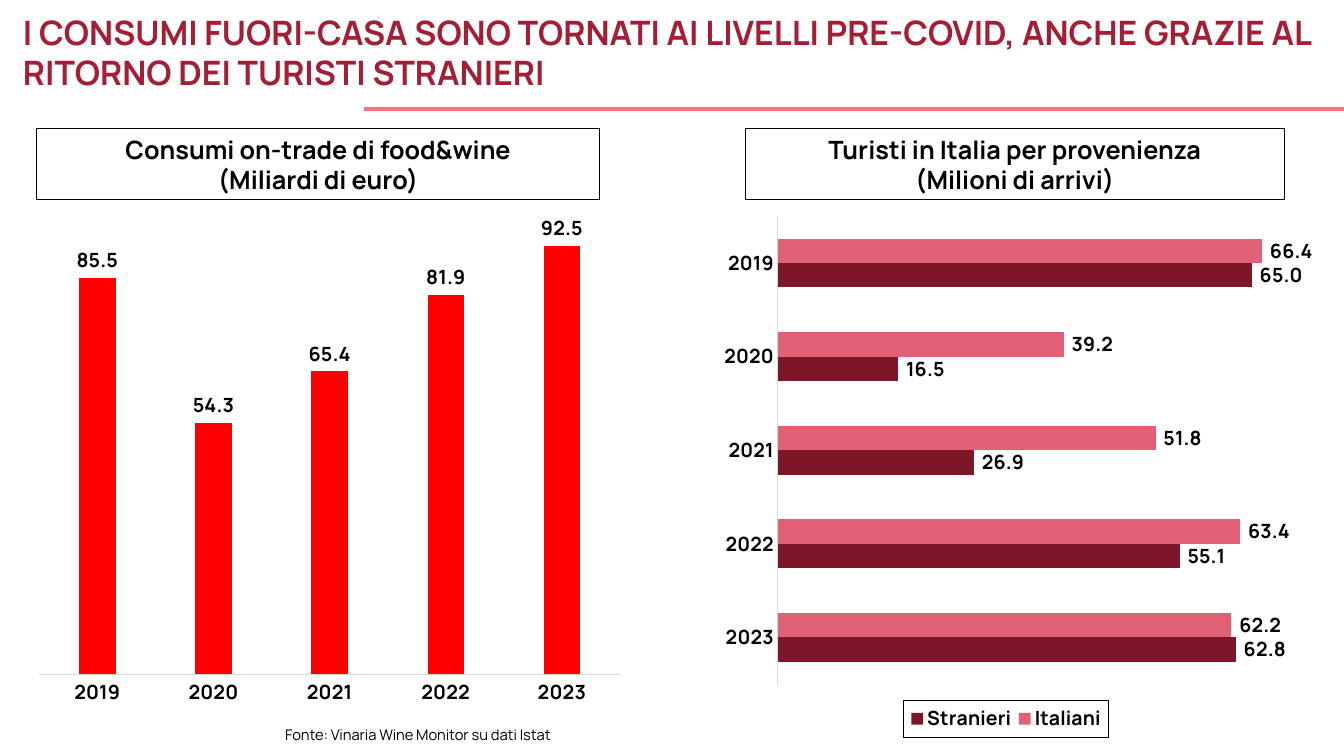
from lxml import etree
from pptx import Presentation
from pptx import util as u
from pptx.chart.data import CategoryChartData
from pptx.dml.color import RGBColor
from pptx.enum import chart as ch, shapes, text
from pptx.oxml import parse_xml
from pptx.oxml.ns import nsdecls, qn

BLACK = RGBColor(0x00, 0x00, 0x00)
WHITE = RGBColor(0xFF, 0xFF, 0xFF)
CRIMSON = RGBColor(0xA4, 0x1F, 0x35)
CORAL = RGBColor(0xF8, 0x75, 0x75)
RED = RGBColor(0xFF, 0x00, 0x00)
ROSE = RGBColor(0xE1, 0x60, 0x75)
WINE = RGBColor(0x7B, 0x17, 0x28)
GREY = RGBColor(0xD9, 0xD9, 0xD9)

PX = 9144  # 100 px to the inch
YEARS = ["2019", "2020", "2021", "2022", "2023"]


class Slide:
    font = "Manrope"

    def __init__(self, prs):
        self.s = prs.slides.add_slide(prs.slide_layouts[6])

    def box(self, *px):
        return [u.Emu(n * PX) for n in px]

    def style(self, f, size, color=BLACK, bold=True):
        f.name, f.size, f.bold = self.font, u.Pt(size), bold
        f.color.rgb = color

    def fill_text(self, tf, lines, size, color, bold, align):
        for i, line in enumerate(lines):
            p = tf.add_paragraph() if i else tf.paragraphs[0]
            p.text, p.alignment = line, align
            self.style(p.font, size, color, bold)

    def text(self, at, line, size, color=BLACK, bold=False, wrap=True):
        tf = self.s.shapes.add_textbox(*self.box(*at)).text_frame
        tf.word_wrap = wrap
        self.fill_text(tf, [line], size, color, bold, text.PP_ALIGN.LEFT)

    def heading(self, at, lines):
        sp = self.s.shapes.add_shape(shapes.MSO_SHAPE.RECTANGLE, *self.box(*at))
        sp.shadow.inherit = False
        sp.fill.background()
        sp.line.color.rgb, sp.line.width = BLACK, u.Pt(0.75)
        sp.text_frame.vertical_anchor = text.MSO_ANCHOR.MIDDLE
        self.fill_text(sp.text_frame, lines, 18, BLACK, True, text.PP_ALIGN.CENTER)

    def rule(self, ends, color, width):
        c = self.s.shapes.add_connector(shapes.MSO_CONNECTOR.STRAIGHT, *self.box(*ends))
        c.line.color.rgb, c.line.width = color, u.Pt(width)
        etree.SubElement(c._element.spPr, qn("a:effectLst"))

    def layout(self, x, y, w, h, inner=False):
        target = '<c:layoutTarget val="inner"/>' if inner else ""
        modes = "".join(f'<c:{k}Mode val="edge"/>' for k in "xy")
        sizes = "".join(f'<c:{k} val="{v}"/>' for k, v in zip("xywh", (x, y, w, h)))
        return parse_xml(f'<c:layout {nsdecls("c")}><c:manualLayout>{target}{modes}'
                         f'{sizes}</c:manualLayout></c:layout>')

    def chart(self, at, kind, series, top, gap, overlap, fmt, plot_area):
        """series: (name, colour, values); plot_area: fractions of the chart."""
        data = CategoryChartData()
        data.categories = YEARS
        for name, _, values in series:
            data.add_series(name, values)
        chart = self.s.shapes.add_chart(kind, *self.box(*at), data).chart
        chart.has_title = chart.has_legend = False
        self.style(chart.font, 14)

        # Axes
        cat, val = chart.category_axis, chart.value_axis
        cat.major_tick_mark = ch.XL_TICK_MARK.NONE
        cat.format.line.color.rgb, cat.format.line.width = GREY, u.Pt(0.75)
        self.style(cat.tick_labels.font, 14)
        val.minimum_scale, val.maximum_scale = 0, top
        val.has_major_gridlines = val.visible = False

        # Bars and labels
        plot = chart.plots[0]
        plot.gap_width, plot.overlap, plot.vary_by_categories = gap, overlap, False
        for ser, (_, color, _) in zip(plot.series, series):
            ser.format.fill.solid()
            ser.format.fill.fore_color.rgb = color
            labels = ser.data_labels
            labels.show_value = True
            labels.position = ch.XL_LABEL_POSITION.OUTSIDE_END
            labels.number_format, labels.number_format_is_linked = fmt, False
            self.style(labels.font, 14)

        area = chart._chartSpace.chart.plotArea
        for old in area.findall(qn("c:layout")):
            area.remove(old)
        area.insert(0, self.layout(*plot_area, inner=True))
        return chart

    def legend(self, chart, *place):
        chart.has_legend = True
        legend = chart.legend
        legend.position = ch.XL_LEGEND_POSITION.BOTTOM
        legend.include_in_layout = False
        self.style(legend.font, 14)
        el = legend._element
        for old in el.findall(qn("c:layout")):
            el.remove(old)
        el.find(qn("c:legendPos")).addnext(self.layout(*place))
        el.find(qn("c:overlay")).addnext(parse_xml(
            f'<c:spPr {nsdecls("c", "a")}><a:ln w="9525"><a:solidFill>'
            f'<a:srgbClr val="{BLACK}"/></a:solidFill></a:ln></c:spPr>'))


def main():
    prs = Presentation()
    prs.slide_width, prs.slide_height = u.Emu(1333 * PX), u.Emu(750 * PX)
    slide = Slide(prs)
    slide.s.background.fill.solid()
    slide.s.background.fill.fore_color.rgb = WHITE

    # Title and rule
    slide.rule((361, 108, 1333, 108), CORAL, 3)
    slide.text((13, 7, 1306, 90),
               "I CONSUMI FUORI-CASA SONO TORNATI AI LIVELLI PRE-COVID, "
               "ANCHE GRAZIE AL RITORNO DEI TURISTI STRANIERI", 24, CRIMSON, True)

    # Spending out of home
    slide.heading((36, 128, 559, 70), ["Consumi on-trade di food&wine", "(Miliardi di euro)"])
    slide.chart((27, 199, 600, 511), ch.XL_CHART_TYPE.COLUMN_CLUSTERED,
                [("Consumi", RED, (85.5, 54.3, 65.4, 81.9, 92.5))],
                100, 219, -27, "General", (0.02, 0.02, 0.96, 0.9))

    # Tourist arrivals
    slide.heading((739, 128, 535, 70), ["Turisti in Italia per provenienza", "(Milioni di arrivi)"])
    arrivals = slide.chart((706, 204, 600, 528), ch.XL_CHART_TYPE.BAR_CLUSTERED,
                           [("Italiani", ROSE, (66.4, 39.2, 51.8, 63.4, 62.2)),
                            ("Stranieri", WINE, (65, 16.5, 26.9, 55.1, 62.8))],
                           70, 182, 0, r"\ #,##0.0\ ", (0.11, 0.02, 0.85, 0.88))
    arrivals.category_axis.reverse_order = True
    slide.legend(arrivals, 0.32, 0.93, 0.34, 0.07)

    # Source
    slide.text((273, 715, 329, 27), "Fonte: Vinaria Wine Monitor su dati Istat", 10.5, wrap=False)

    prs.save("out.pptx")


if __name__ == "__main__":
    main()
